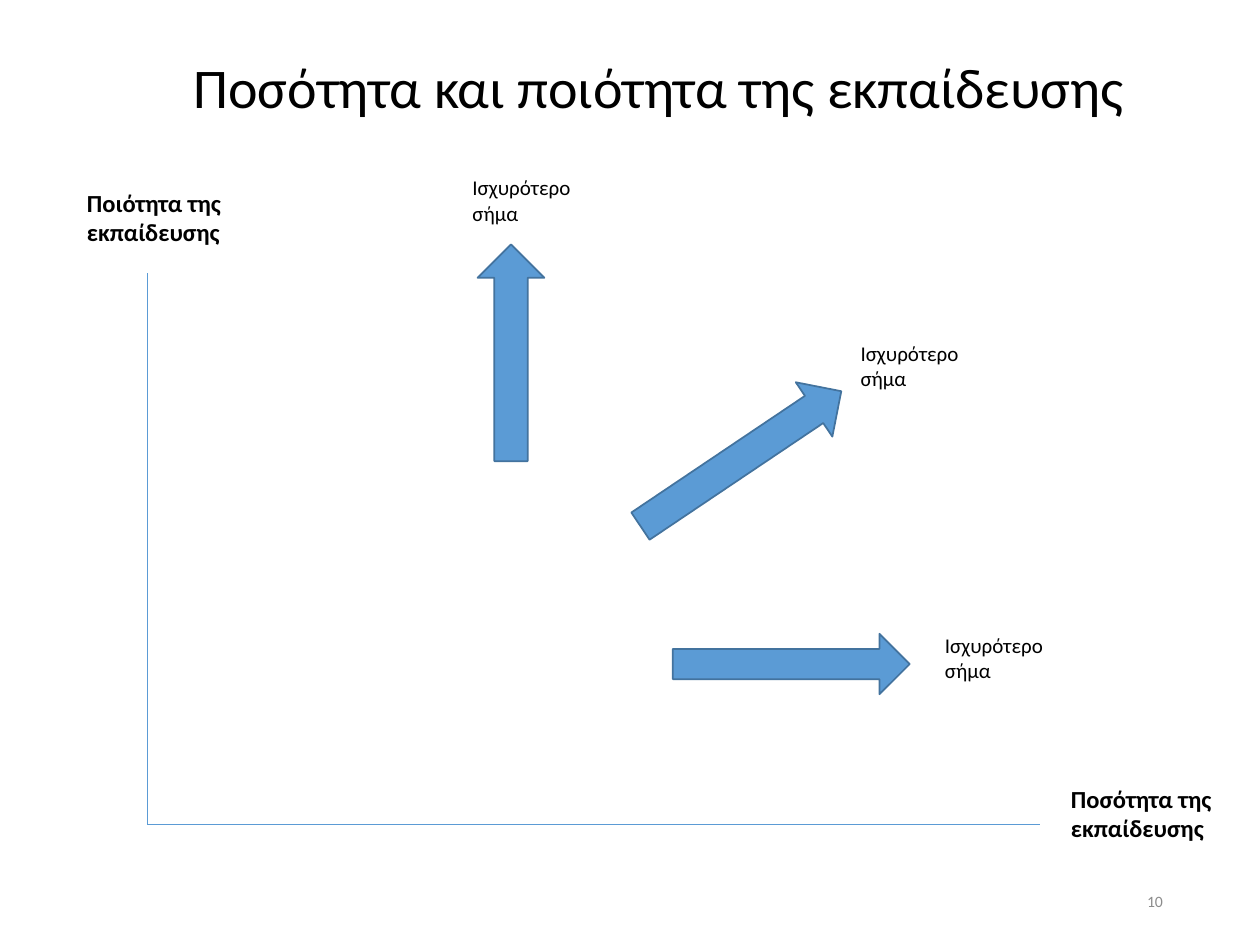
from lxml.etree import SubElement
from pptx import Presentation
from pptx.dml.color import RGBColor
from pptx.enum.shapes import MSO_CONNECTOR, MSO_SHAPE
from pptx.enum.text import MSO_ANCHOR, PP_ALIGN
from pptx.oxml.ns import qn
from pptx.util import Inches, Pt

COLORS = {"text": "000000", "page": "8C8C8C", "fill": "5B9BD5", "edge": "43739E"}
FRAME = {
    "word_wrap": True,
    "margin_left": Inches(0.08),
    "margin_right": Inches(0.08),
    "margin_top": Inches(0.05),
    "margin_bottom": Inches(0.05),
}


def tint(name):
    return RGBColor.from_string(COLORS[name])


def apply(target, values):
    for key, value in values.items():
        setattr(target, key, value)


def add_text(slide, box, text, size, color="text", bold=False, frame={}, para={}):
    body = slide.shapes.add_textbox(*map(Inches, box)).text_frame
    apply(body, {**FRAME, **frame})
    line = body.paragraphs[0]
    apply(line, para)
    run = line.add_run()
    run.text = text
    apply(run.font, {"name": "Calibri", "size": Pt(size), "bold": bold})
    run.font.color.rgb = tint(color)


def add_title(slide, box):
    add_text(slide, box, "Ποσότητα και ποιότητα της εκπαίδευσης", 32,
             frame={"vertical_anchor": MSO_ANCHOR.MIDDLE},
             para={"alignment": PP_ALIGN.CENTER, "line_spacing": 0.9})


def add_page(slide, box):
    add_text(slide, box, "10", 9, "page",
             frame={"vertical_anchor": MSO_ANCHOR.MIDDLE},
             para={"alignment": PP_ALIGN.RIGHT})


def add_axes(slide, box):
    left, top, width, height = box
    base = top + height
    for end in ((left, top), (left + width, base)):
        axis = slide.shapes.add_connector(
            MSO_CONNECTOR.STRAIGHT, *map(Inches, (*end, left, base)))
        axis.line.color.rgb = tint("fill")
        axis.line.width = Pt(0.5)
        SubElement(axis._element.spPr, qn("a:effectLst"))
    names = (
        ("Ποιότητα της εκπαίδευσης", left - 0.56, top - 0.73, 1.5),
        ("Ποσότητα της εκπαίδευσης", left + width + 0.17, base - 0.37, 1.33),
    )
    for text, x, y, wide in names:
        add_text(slide, (x, y, wide, 0.57), text, 14, bold=True)


def add_signal(slide, box, turn, label):
    arrow = slide.shapes.add_shape(MSO_SHAPE.DOWN_ARROW, *map(Inches, box))
    arrow.rotation = turn
    arrow.shadow.inherit = False
    arrow.fill.solid()
    arrow.fill.fore_color.rgb = tint("fill")
    arrow.line.color.rgb = tint("edge")
    arrow.line.width = Pt(1)
    dx, dy, wide = label
    add_text(slide, (box[0] + dx, box[1] + dy, wide, 0.5), "Ισχυρότερο σήμα", 12)


def main():
    deck = Presentation()
    apply(deck, {"slide_width": Inches(10), "slide_height": Inches(7.5)})
    slide = deck.slides.add_slide(deck.slide_layouts[6])
    add_title(slide, (0.92, 0.4, 8.62, 0.63))
    add_axes(slide, (1.17, 2.17, 7.08, 4.37))
    signals = (
        ((3.79, 1.94, 0.53, 1.72), 180, (-0.12, -0.6, 1.16)),
        ((6.04, 4.33, 0.48, 1.88), 270, (1.38, 0.64, 1.16)),
        ((5.62, 2.68, 0.52, 1.92), 236.1, (1.13, -0.03, 1.24)),
    )
    for box, turn, label in signals:
        add_signal(slide, box, turn, label)
    add_page(slide, (7.06, 6.95, 2.25, 0.4))
    deck.save("out.pptx")


if __name__ == "__main__":
    main()
